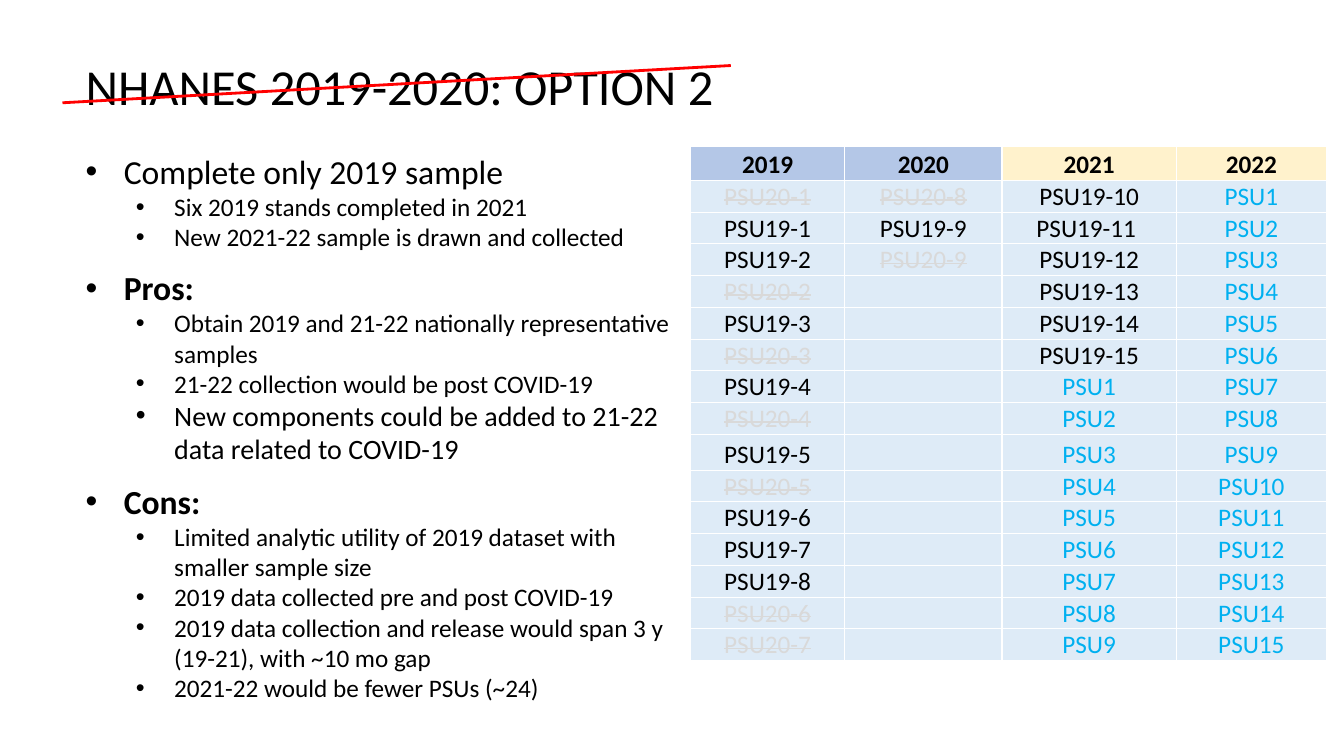
from lxml import etree
from pptx import Presentation
from pptx.dml.color import RGBColor
from pptx.enum.shapes import MSO_CONNECTOR
from pptx.enum.text import MSO_ANCHOR, MSO_AUTO_SIZE, PP_ALIGN
from pptx.oxml.ns import qn
from pptx.util import Inches, Pt

STRAIGHT = MSO_CONNECTOR.STRAIGHT
MIDDLE, BOTTOM = MSO_ANCHOR.MIDDLE, MSO_ANCHOR.BOTTOM
GROW = MSO_AUTO_SIZE.SHAPE_TO_FIT_TEXT
CENTER = PP_ALIGN.CENTER

FONT = "Calibri"
COLORS = {
    "black": "000000", "white": "FFFFFF", "red": "FF0000",
    "dropped": "D9D9D9", "new": "00B0F0",
    "past": "B4C7E7", "future": "FFF2CC", "body": "DEEBF7",
}

# Bullets: level, text, size, bold, space before
BULLETS = [
    (0, "Complete only 2019 sample", 24, False, 0),
    (1, "Six 2019 stands completed in 2021", 18, False, 0),
    (1, "New 2021-22 sample is drawn and collected", 18, False, 0),
    (0, "Pros:", 24, True, 11),
    (1, "Obtain 2019 and 21-22 nationally representative samples", 18, False, 0),
    (1, "21-22 collection would be post COVID-19", 18, False, 0),
    (1, "New components could be added to 21-22 data related to COVID-19", 20, False, 0),
    (0, "Cons:", 24, True, 11),
    (1, "Limited analytic utility of 2019 dataset with smaller sample size", 18, False, 0),
    (1, "2019 data collected pre and post COVID-19", 18, False, 0),
    (1, "2019 data collection and release would span 3 y (19-21), with ~10 mo gap", 18, False, 0),
    (1, "2021-22 would be fewer PSUs (~24)", 18, False, 0),
]

# Sampling units by year; the prefix tells the sample
OLD, DROPPED, NEW = "PSU19-", "PSU20-", "PSU"
SCHEDULE = {
    "2019": [DROPPED + "1", OLD + "1", OLD + "2", DROPPED + "2", OLD + "3",
             DROPPED + "3", OLD + "4", DROPPED + "4", OLD + "5", DROPPED + "5",
             OLD + "6", OLD + "7", OLD + "8", DROPPED + "6", DROPPED + "7"],
    "2020": [DROPPED + "8", OLD + "9", DROPPED + "9"] + [""] * 12,
    "2021": [OLD + "10", OLD + "11 "] + [f"{OLD}{n}" for n in range(12, 16)]
            + [f"{NEW}{n}" for n in range(1, 10)],
    "2022": [f"{NEW}{n}" for n in range(1, 16)],
}
YEAR_WIDTHS = [9.18, 9.36, 10.38, 8.94]
ROW_HEIGHTS = [2.04] + [1.89] * 8 + [2.13] + [1.89] * 6


class SlideBuilder:
    """Draws on a grid of 80 columns by 45 rows."""

    def __init__(self, deck):
        self.page = deck.slides.add_slide(deck.slide_layouts[6])
        self.column = deck.slide_width / 80
        self.row = deck.slide_height / 45

    def place(self, *grid):
        units = (self.column, self.row) * 2
        return [int(length * unit) for length, unit in zip(grid, units)]

    def color(self, name):
        return RGBColor.from_string(COLORS[name])

    def span(self, para, text, size, color="black", bold=False, strike=False):
        span = para.add_run()
        span.text = text
        span.font.name = FONT
        span.font.size = Pt(size)
        span.font.bold = bold
        span.font.color.rgb = self.color(color)
        if strike:
            span.font._element.set("strike", "sngStrike")

    def text_box(self, *grid):
        box = self.page.shapes.add_textbox(*self.place(*grid))
        box.text_frame.word_wrap = True
        return box.text_frame

    def title(self, text, *grid):
        frame = self.text_box(*grid)
        frame.vertical_anchor = MIDDLE
        self.span(frame.paragraphs[0], text, 36)

    def bullet_list(self, items, *grid):
        frame = self.text_box(*grid)
        frame.auto_size = GROW
        for index, (level, text, size, bold, before) in enumerate(items):
            para = frame.add_paragraph() if index else frame.paragraphs[0]
            para.level = level
            para.space_before = Pt(before)
            props = para._p.get_or_add_pPr()
            props.set("marL", str(Inches(0.38 + 0.5 * level)))
            props.set("indent", str(Inches(-0.38)))
            etree.SubElement(props, qn("a:buFont"), typeface="Arial")
            etree.SubElement(props, qn("a:buChar"), char="•")
            self.span(para, text, size, bold=bold)

    def cell(self, cell, text, fill, **style):
        cell.margin_left = cell.margin_right = cell.margin_top = Inches(0.01)
        cell.margin_bottom = 0
        cell.vertical_anchor = BOTTOM
        props = cell._tc.get_or_add_tcPr()
        for side in ("a:lnL", "a:lnR", "a:lnT", "a:lnB"):
            border = etree.SubElement(props, qn(side), w=str(Pt(1)))
            paint = etree.SubElement(border, qn("a:solidFill"))
            etree.SubElement(paint, qn("a:srgbClr"), val=COLORS["white"])
        cell.fill.solid()
        cell.fill.fore_color.rgb = self.color(fill)
        para = cell.text_frame.paragraphs[0]
        para.alignment = CENTER
        if text:
            self.span(para, text, 18, **style)
        else:
            para.font.size = Pt(18)

    def schedule(self, years, widths, heights, left, top):
        place = self.place(left, top, sum(widths), sum(heights))
        table = self.page.shapes.add_table(len(heights), len(widths), *place).table
        table.first_row = table.horz_banding = False
        for column, width in zip(table.columns, widths):
            column.width = int(width * self.column)
        for row, height in zip(table.rows, heights):
            row.height = int(height * self.row)
        for x, (year, units) in enumerate(years.items()):
            self.cell(table.cell(0, x), year, "past" if x < 2 else "future", bold=True)
            for y, unit in enumerate(units, start=1):
                dropped = unit.startswith(DROPPED)
                color = "dropped" if dropped else "black" if unit.startswith(OLD) else "new"
                self.cell(table.cell(y, x), unit, "body", color=color, strike=dropped)

    def line(self, *grid, color, width):
        line = self.page.shapes.add_connector(STRAIGHT, *self.place(*grid))
        line.line.color.rgb = self.color(color)
        line.line.width = Pt(width)
        etree.SubElement(line._element.spPr, qn("a:effectLst"))


def main():
    deck = Presentation()
    deck.slide_width, deck.slide_height = Inches(13.33), Inches(7.5)
    slide = SlideBuilder(deck)

    # Title
    slide.title("NHANES 2019-2020: OPTION 2", 4.5, 1.5, 69.4, 7.14)
    # Schedule of sampling units
    slide.schedule(SCHEDULE, YEAR_WIDTHS, ROW_HEIGHTS, 41.1, 8.7)
    # Pros and cons
    slide.bullet_list(BULLETS, 4.5, 8.7, 36.6, 33.7)
    # Strike through the title
    slide.line(3.72, 6.12, 43.5, 3.9, color="red", width=2)

    deck.save("out.pptx")


if __name__ == "__main__":
    main()
